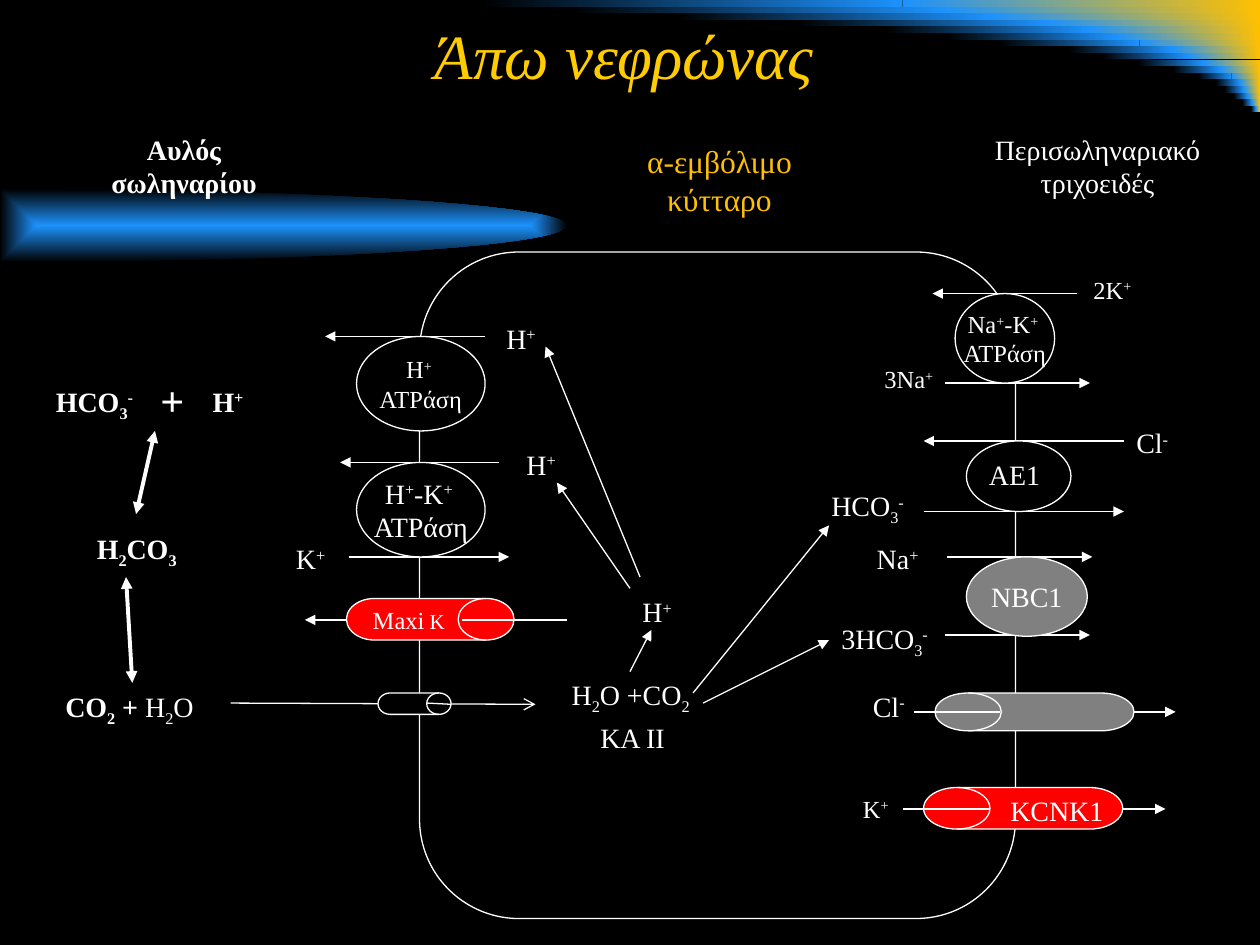
from math import cos, pi, sin

from lxml.etree import SubElement
from pptx import Presentation
from pptx.dml.color import RGBColor
from pptx.enum.shapes import MSO_CONNECTOR, MSO_SHAPE
from pptx.enum.text import MSO_ANCHOR, PP_ALIGN
from pptx.oxml.ns import qn
from pptx.util import Inches, Pt

rgb = RGBColor.from_string
WHITE, BLACK, RED, GRAY = "FFFFFF", "000000", "FF0000", "808080"
BLUE, GOLD, YELLOW = "1D92FD", "FFC000", "FFCC00"
LEFT, CENTER, RIGHT = PP_ALIGN.LEFT, PP_ALIGN.CENTER, PP_ALIGN.RIGHT
BASELINES = {"^": "30000", "_": "-25000"}

prs = Presentation()
prs.slide_width, prs.slide_height = Inches(10), Inches(7.5)
slide = prs.slides.add_slide(prs.slide_layouts[6])
slide.background.fill.solid()
slide.background.fill.fore_color.rgb = rgb(BLACK)
shapes = slide.shapes


def write(frame, markup, size, align, wrap=False, color=WHITE, bold=False):
    frame.word_wrap = wrap
    for number, line in enumerate(markup.split("\n")):
        paragraph = frame.add_paragraph() if number else frame.paragraphs[0]
        paragraph.alignment = align
        for part in line.split("|"):
            run = paragraph.add_run()
            run.text = part.lstrip("^_")
            run.font.name = "Times New Roman"
            run.font.size = Pt(size)
            run.font.bold = bold
            run.font.color.rgb = rgb(color)
            if part[0] in BASELINES:
                run.font._element.set("baseline", BASELINES[part[0]])


def link(x1, y1, x2, y2, tail=None, head=None, width=0.75):
    line = shapes.add_connector(MSO_CONNECTOR.STRAIGHT, Inches(x1), Inches(y1), Inches(x2), Inches(y2))
    line.line.color.rgb = rgb(WHITE)
    line.line.width = Pt(width)
    for end, arrow in (("a:headEnd", head), ("a:tailEnd", tail)):
        if arrow:
            SubElement(line.line._get_or_add_ln(), qn(end), type=arrow)
    SubElement(line._element.spPr, qn("a:effectLst"))


ray_starts = [3.83, 4.53, 5.36, 6.33, 7.02, 7.51, 7.92, 8.48, 8.75,
              9.03, 9.31, 9.51, 9.65, 9.72, 9.79, 9.86, 9.93]
for row, start in enumerate(ray_starts):
    middle = start + 0.54 * (10 - start)
    for x, right, colors in ((middle, 10, (BLUE, GOLD)), (start, middle, (BLACK, BLUE))):
        ray = shapes.add_shape(MSO_SHAPE.RECTANGLE, Inches(x), Inches(row * 0.0525),
                               Inches(right - x), Inches(0.0525))
        ray.shadow.inherit = False
        ray.line.fill.background()
        ray.fill.gradient()
        ray.fill.gradient_angle = 0
        for stop, color in zip(ray.fill.gradient_stops, colors):
            stop.color.rgb = rgb(color)

beam_angles = [pi * (step / 60 - 0.5) for step in range(61)]
beam_points = [(Inches(4.5 * cos(a)), Inches(1.79 + 0.29 * sin(a))) for a in beam_angles]
beam_builder = shapes.build_freeform(*beam_points[0])
beam_builder.add_line_segments(beam_points[1:])
beam = beam_builder.convert_to_shape()
beam.shadow.inherit = False
beam.line.fill.background()
beam.fill.gradient()
for stop, color in zip(beam.fill.gradient_stops, (BLUE, BLACK)):
    stop.color.rgb = rgb(color)
beam_gradient = beam._element.spPr.find(qn("a:gradFill"))
beam_gradient.remove(beam_gradient.find(qn("a:lin")))
beam_path = SubElement(beam_gradient, qn("a:path"), path="shape")
SubElement(beam_path, qn("a:fillToRect"), l="50000", t="50000", r="50000", b="50000")

cell = shapes.add_shape(MSO_SHAPE.ROUNDED_RECTANGLE, Inches(3.33), Inches(2), Inches(4.73), Inches(5.29))
cell.adjustments[0] = 0.167
cell.shadow.inherit = False
cell.fill.background()
cell.line.color.rgb = rgb(WHITE)
cell.line.width = Pt(0.75)

fluxes = [
    (8.55, 2.33, 7.4, 2.33), (7.5, 3.04, 8.65, 3.04),
    (8.92, 3.5, 7.33, 3.5), (7.33, 4.06, 8.92, 4.06),
    (7.52, 4.42, 8.67, 4.42), (7.5, 5.04, 8.65, 5.04),
    (7.25, 5.65, 9.33, 5.65), (7.17, 6.42, 9.25, 6.42),
    (3.85, 2.67, 2.58, 2.67), (3.96, 3.67, 2.7, 3.67),
    (2.77, 4.42, 4.04, 4.42), (4.5, 4.92, 2.42, 4.92),
    (5.5, 5.5, 6.58, 4.17), (5.58, 5.58, 6.58, 5.08),
    (5, 4.67, 4.42, 3.83), (5.08, 4.58, 4.33, 2.75), (5, 5.33, 5.17, 5),
]
for flux in fluxes:
    link(*flux, tail="triangle")
link(1.83, 5.58, 4.25, 5.59, tail="arrow")
for equilibrium in ((1.23, 3.42, 1.08, 4.08), (1, 4.58, 1.05, 5.42)):
    link(*equilibrium, tail="triangle", head="triangle", width=2.25)

PUMP, CHANNEL = MSO_SHAPE.OVAL, MSO_SHAPE.FLOWCHART_DIRECT_ACCESS_STORAGE
transporters = [
    (PUMP, 7.58, 2.33, 0.79, 0.71, BLACK, 0, "Na|^+|-K|^+ \nATPάση", 14),
    (PUMP, 7.67, 3.5, 0.83, 0.56, BLACK, 0, "", 16),
    (PUMP, 7.67, 4.42, 0.96, 0.63, GRAY, 0, "NBC1", 16),
    (PUMP, 2.83, 2.67, 1.02, 0.75, BLACK, 0, "Η|^+ \nATPάση", 14),
    (PUMP, 2.83, 3.67, 1.02, 0.75, BLACK, 0, "Η|^+|-K|^+ \nATPάση", 16),
    (CHANNEL, 2.75, 4.75, 1.33, 0.33, RED, 0, "", 14),
    (CHANNEL, 3, 5.5, 0.58, 0.17, BLACK, 0, "", 14),
    (CHANNEL, 7.42, 5.5, 1.58, 0.3, GRAY, 180, "", 16),
    (CHANNEL, 7.33, 6.25, 1.58, 0.33, RED, 180, "", 16),
]
for kind, x, y, width, height, color, turn, caption, size in transporters:
    transporter = shapes.add_shape(kind, Inches(x), Inches(y), Inches(width), Inches(height))
    transporter.shadow.inherit = False
    transporter.rotation = turn
    transporter.fill.solid()
    transporter.fill.fore_color.rgb = rgb(color)
    transporter.line.color.rgb = rgb(WHITE)
    transporter.line.width = Pt(0.75)
    if caption:
        transporter.text_frame.vertical_anchor = MSO_ANCHOR.MIDDLE
        write(transporter.text_frame, caption, size, CENTER)

for pore in ((3.67, 4.92, 4.11, 4.92), (3.39, 5.58, 3.58, 5.59),
             (7.42, 5.65, 7.94, 5.65), (7.33, 6.42, 7.86, 6.42)):
    link(*pore)

headings = [
    ("Άπω νεφρώνας", 36, 0.33, 0.08, 9.25, 1, YELLOW, False),
    ("Αυλός σωληναρίου", 16, 0.67, 1, 1.58, 2, WHITE, True),
    ("α-εμβόλιμο κύτταρο", 18, 4.75, 1.08, 1.92, 2, GOLD, False),
    ("Περισωληναριακό τριχοειδές", 16, 7.75, 1, 1.92, 2, WHITE, False),
]
for text, size, x, y, width, lines, color, bold in headings:
    heading = shapes.add_textbox(Inches(x), Inches(y), Inches(width), Inches(0.1 + lines * size / 60))
    write(heading.text_frame, text, size, CENTER, True, color, bold)
    heading.text_frame.paragraphs[0].runs[0].font.italic = size == 36

labels = [
    ("2K|^+", 14, 8.58, 2.13, 0.52, LEFT, False, False),
    ("3Na|^+", 14, 6.92, 2.84, 0.6, LEFT, False, False),
    ("Cl|^-", 16, 8.92, 3.33, 0.46, LEFT, False, False),
    ("ΑΕ1", 16, 7.75, 3.58, 0.75, LEFT, True, False),
    ("HCO|_3|^-", 16, 6.5, 3.83, 0.8, LEFT, False, False),
    ("Na|^+", 16, 6.86, 4.25, 0.55, LEFT, False, False),
    ("3HCO|_3|^-", 16, 6.58, 4.88, 0.91, LEFT, False, False),
    ("Cl|^-", 16, 6.83, 5.42, 0.46, LEFT, False, False),
    ("K|^+", 14, 6.75, 6.25, 0.42, LEFT, False, False),
    ("KCNK1", 16, 7.92, 6.25, 0.95, LEFT, True, False),
    ("Η|^+", 16, 3.92, 2.5, 0.54, LEFT, True, False),
    ("Η|^+", 16, 4.08, 3.5, 0.54, LEFT, True, False),
    ("Κ|^+", 16, 2.25, 4.25, 0.54, LEFT, True, False),
    ("Maxi| K", 14, 2.83, 4.75, 0.83, CENTER, True, False),
    ("Η|^+", 16, 5, 4.67, 0.46, LEFT, False, False),
    ("H|_2|O +CO|_2", 16, 4.42, 5.33, 1.17, CENTER, True, False),
    ("ΚA II", 16, 4.66, 5.67, 0.72, CENTER, False, False),
    ("HCO|_3|^-", 16, 0.33, 3, 0.84, CENTER, False, True),
    ("+", 24, 1.17, 2.92, 0.39, RIGHT, False, True),
    ("Η|^+", 16, 1.58, 3, 0.46, CENTER, False, True),
    ("H|_2|CO|_3", 16, 0.67, 4.17, 0.86, LEFT, False, True),
    ("CO|_2| + |H|_2|O", 16, 0.42, 5.42, 1.24, LEFT, False, True),
]
for text, size, x, y, width, align, wrap, bold in labels:
    label = shapes.add_textbox(Inches(x), Inches(y), Inches(width), Inches(0.1 + size / 60))
    write(label.text_frame, text, size, align, wrap, bold=bold)
    runs = label.text_frame.paragraphs[0].runs
    if text.startswith("Maxi"):
        runs[1].font.size = Pt(12)
    if text.startswith("CO"):
        for run in runs[3:]:
            run.font.bold = False

prs.save("out.pptx")
